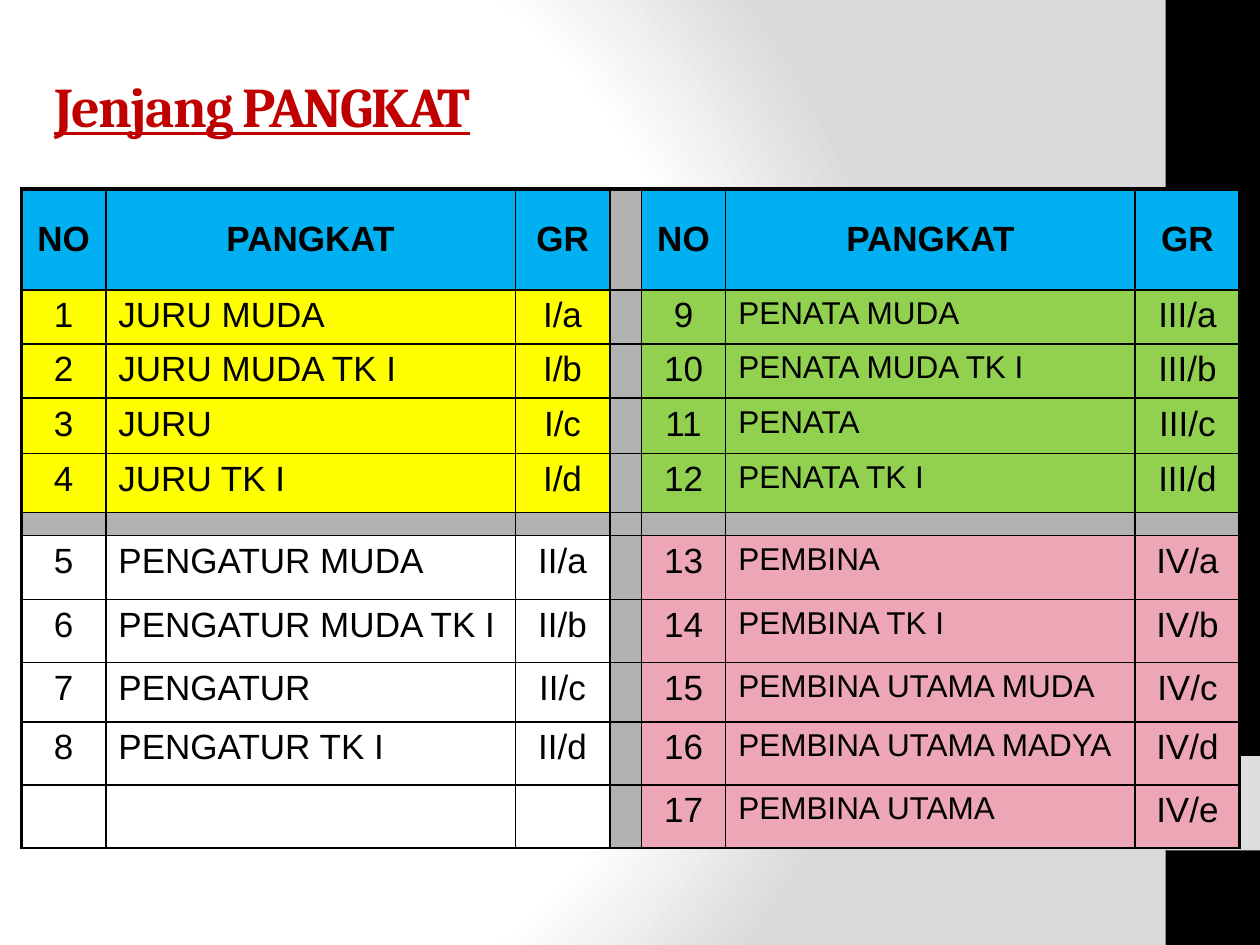
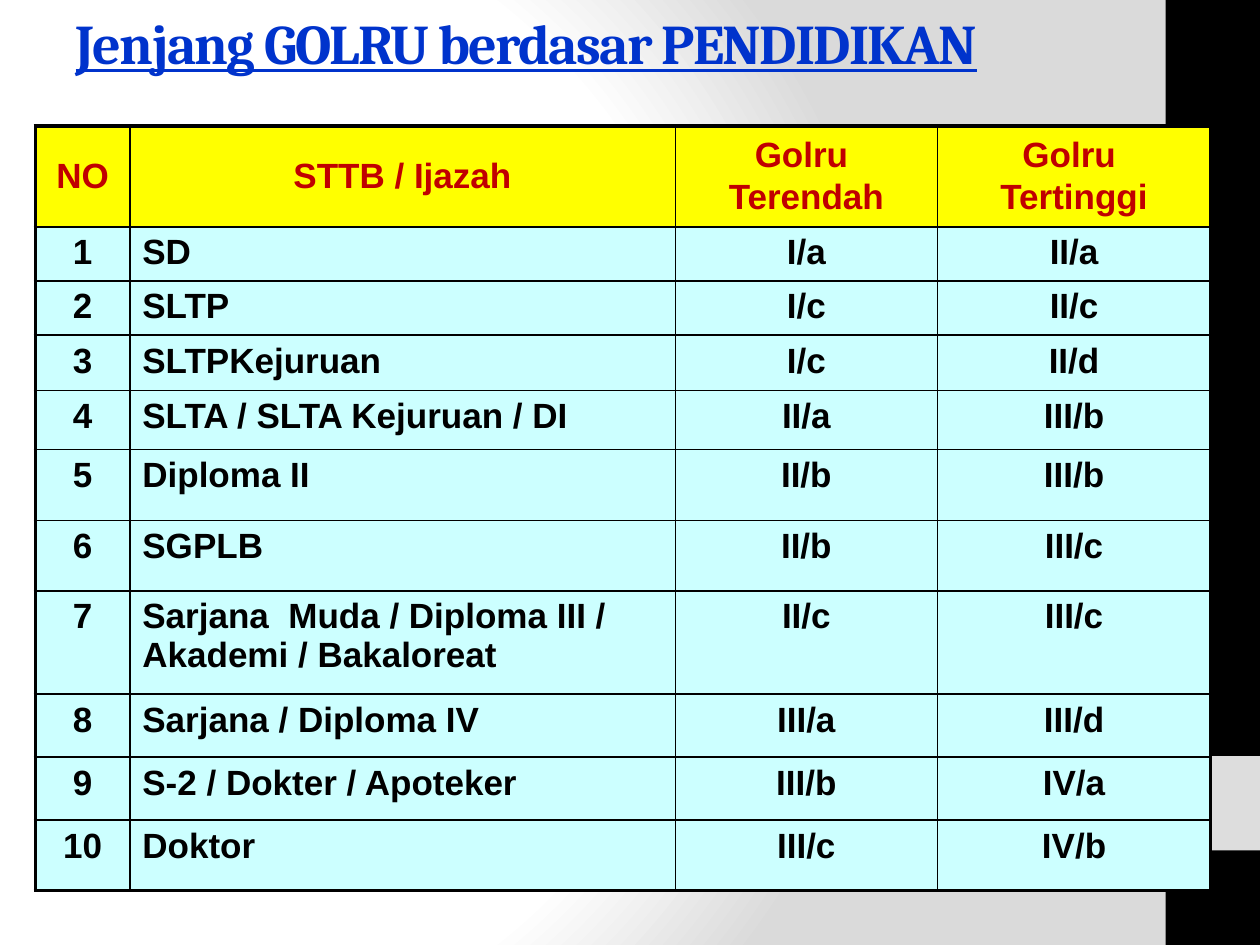
from lxml.etree import SubElement
from pptx import Presentation
from pptx.dml.color import RGBColor
from pptx.enum.shapes import MSO_SHAPE
from pptx.enum.text import MSO_ANCHOR, PP_ALIGN
from pptx.oxml.ns import qn
from pptx.util import Pt

SCALE = 9144  # EMU per px, 100 px to the inch
THIN, THICK = Pt(1), Pt(2.25)
COLORS = {
    "black": "000000", "white": "FFFFFF", "backdrop": "DADADA", "tab": "DDDDDD",
    "red": "C00000", "title blue": "0033CC", "sky": "00B0F0", "yellow": "FFFF00",
    "green": "92D050", "pink": "ECA6B5", "gray": "B2B2B2", "aqua": "CCFFFF",
}


def color(name):
    return RGBColor.from_string(COLORS[name])


def add_border(cell, side, width):
    line = SubElement(cell._tc.get_or_add_tcPr(), qn(f"a:ln{side}"), w=str(width))
    fill = SubElement(line, qn("a:solidFill"))
    SubElement(fill, qn("a:srgbClr"), val=COLORS["black"])


presentation = Presentation()
presentation.slide_width = 1000 * SCALE
presentation.slide_height = 750 * SCALE
master = presentation.slide_master
title_only = presentation.slide_layouts[5]

# Rank table: two halves beside a gray gap, split by a gray row
left_ranks = [
    ("1", "JURU MUDA", "I/a"), ("2", "JURU MUDA TK I", "I/b"),
    ("3", "JURU", "I/c"), ("4", "JURU TK I", "I/d"),
    ("", "", ""),
    ("5", "PENGATUR MUDA", "II/a"), ("6", "PENGATUR MUDA TK I", "II/b"),
    ("7", "PENGATUR", "II/c"), ("8", "PENGATUR TK I", "II/d"),
    ("", "", ""),
]
right_ranks = [
    ("9", "PENATA MUDA", "III/a"), ("10", "PENATA MUDA TK I", "III/b"),
    ("11", "PENATA", "III/c"), ("12", "PENATA TK I", "III/d"),
    ("", "", ""),
    ("13", "PEMBINA", "IV/a"), ("14", "PEMBINA TK I", "IV/b"),
    ("15", "PEMBINA UTAMA MUDA", "IV/c"), ("16", "PEMBINA UTAMA MADYA", "IV/d"),
    ("17", "PEMBINA UTAMA", "IV/e"),
]
rank_header = ("NO", "PANGKAT", "GR")
rank_rows = [(*rank_header, "", *rank_header)]
rank_rows += [(*left, "", *right) for left, right in zip(left_ranks, right_ranks)]
half_fills = [("sky", "sky")] + [("yellow", "green")] * 4
half_fills += [("gray", "gray")] + [("white", "pink")] * 5
rank_fills = [[left] * 3 + ["gray"] + [right] * 3 for left, right in half_fills]

# Education table
education_rows = [
    ("NO", "STTB / Ijazah", "Golru \nTerendah", "Golru \nTertinggi"),
    ("1", "SD", "I/a", "II/a"),
    ("2", "SLTP", "I/c", "II/c"),
    ("3", "SLTPKejuruan", "I/c", "II/d"),
    ("4", "SLTA / SLTA Kejuruan / DI", "II/a", "III/b"),
    ("5", "Diploma II", "II/b", "III/b"),
    ("6", "SGPLB", "II/b", "III/c"),
    ("7", "Sarjana  Muda / Diploma III / Akademi / Bakaloreat", "II/c", "III/c"),
    ("8", "Sarjana / Diploma IV", "III/a", "III/d"),
    ("9", "S-2 / Dokter / Apoteker", "III/b", "IV/a"),
    ("10", "Doktor", "III/c", "IV/b"),
]
education_fills = [["yellow"] * 4] + [["aqua"] * 4] * 10

pages = [
    {
        "title": "Jenjang PANGKAT", "title color": "red", "title at": (33, 50),
        "table at": (17, 150), "rows": rank_rows, "fills": rank_fills,
        "widths": [67, 325, 75, 25, 67, 325, 83],
        "heights": [80, 43, 43, 44, 47, 18, 51, 50, 47, 50, 50],
        "left columns": (1, 5), "small columns": (5,),
        "header color": "black", "bold body": False, "bottom": THIN,
    },
    {
        "title": "Jenjang GOLRU berdasar PENDIDIKAN", "title color": "title blue",
        "title at": (50, 0),
        "table at": (28, 100), "rows": education_rows, "fills": education_fills,
        "widths": [75, 433, 208, 217],
        "heights": [80, 43, 43, 44, 47, 56, 56, 82, 50, 50, 56],
        "left columns": (1,), "small columns": (),
        "header color": "red", "bold body": True, "bottom": THICK,
    },
]

# Shared background gradient
master.background.fill.gradient()
gradient = next(master._element.iter(qn("a:gradFill")))
for child in list(gradient):
    gradient.remove(child)
stops = SubElement(gradient, qn("a:gsLst"))
for position, name in ((0, "white"), (75, "white"), (100, "backdrop")):
    stop = SubElement(stops, qn("a:gs"), pos=str(position * 1000))
    SubElement(stop, qn("a:srgbClr"), val=COLORS[name])
path_fill = SubElement(gradient, qn("a:path"), {"path": "circle"})
SubElement(path_fill, qn("a:fillToRect"), l="20000", t="50000", r="100000", b="50000")

slides = [presentation.slides.add_slide(title_only) for page in pages]

# Shared side band and its tab, moved to the master behind the placeholders
for index, (top, height, name) in enumerate(((0, 750, "black"), (600, 75, "tab"))):
    band = slides[0].shapes.add_shape(
        MSO_SHAPE.RECTANGLE, 925 * SCALE, top * SCALE, 75 * SCALE, height * SCALE)
    band.shadow.inherit = False
    band.fill.solid()
    band.fill.fore_color.rgb = color(name)
    band.line.fill.background()
    master.shapes._spTree.insert(2 + index, band._element)

for slide, page in zip(slides, pages):
    # Title
    title = slide.shapes.title
    title.left, title.top = (value * SCALE for value in page["title at"])
    title.width, title.height = 900 * SCALE, 67 * SCALE
    title.text_frame.vertical_anchor = MSO_ANCHOR.MIDDLE
    paragraph = title.text_frame.paragraphs[0]
    paragraph.alignment = PP_ALIGN.LEFT
    run = paragraph.add_run()
    run.text = page["title"]
    run.font.name, run.font.size = "Cambria", Pt(32)
    run.font.bold = run.font.underline = True
    run.font.color.rgb = color(page["title color"])
    run._r.get_or_add_rPr().set("spc", "-100")

    # Table frame
    rows, widths, heights = page["rows"], page["widths"], page["heights"]
    left, top = page["table at"]
    table = slide.shapes.add_table(
        len(rows), len(widths), left * SCALE, top * SCALE,
        sum(widths) * SCALE, sum(heights) * SCALE).table
    table.first_row = table.horz_banding = False
    for column, width in zip(table.columns, widths):
        column.width = width * SCALE
    for row, height in zip(table.rows, heights):
        row.height = height * SCALE

    # Cells
    last_row, last_column = len(rows) - 1, len(widths) - 1
    for row_index, texts in enumerate(rows):
        is_header = row_index == 0
        for column_index, text in enumerate(texts):
            cell = table.cell(row_index, column_index)
            add_border(cell, "L", THICK if column_index == 0 else THIN)
            add_border(cell, "R", THICK if column_index == last_column else THIN)
            add_border(cell, "T", THICK if is_header else THIN)
            add_border(cell, "B", page["bottom"] if row_index == last_row else THIN)
            cell.fill.solid()
            cell.fill.fore_color.rgb = color(page["fills"][row_index][column_index])
            if not text:
                # Tiny end mark lets the gap row stay thin
                cell.margin_top = cell.margin_bottom = 0
                SubElement(cell.text_frame.paragraphs[0]._p, qn("a:endParaRPr"), sz="400")
                continue
            if is_header:
                cell.vertical_anchor = MSO_ANCHOR.MIDDLE
            at_left = column_index in page["left columns"] and not is_header
            is_small = column_index in page["small columns"] and not is_header
            for line_index, line in enumerate(text.split("\n")):
                if line_index == 0:
                    paragraph = cell.text_frame.paragraphs[0]
                else:
                    paragraph = cell.text_frame.add_paragraph()
                    paragraph.space_before = Pt(2)
                paragraph.alignment = PP_ALIGN.LEFT if at_left else PP_ALIGN.CENTER
                run = paragraph.add_run()
                run.text = line
                run.font.name, run.font.size = "Arial", Pt(18 if is_small else 20)
                run.font.bold = is_header or page["bold body"]
                run.font.color.rgb = color(page["header color"] if is_header else "black")

presentation.save("out.pptx")
